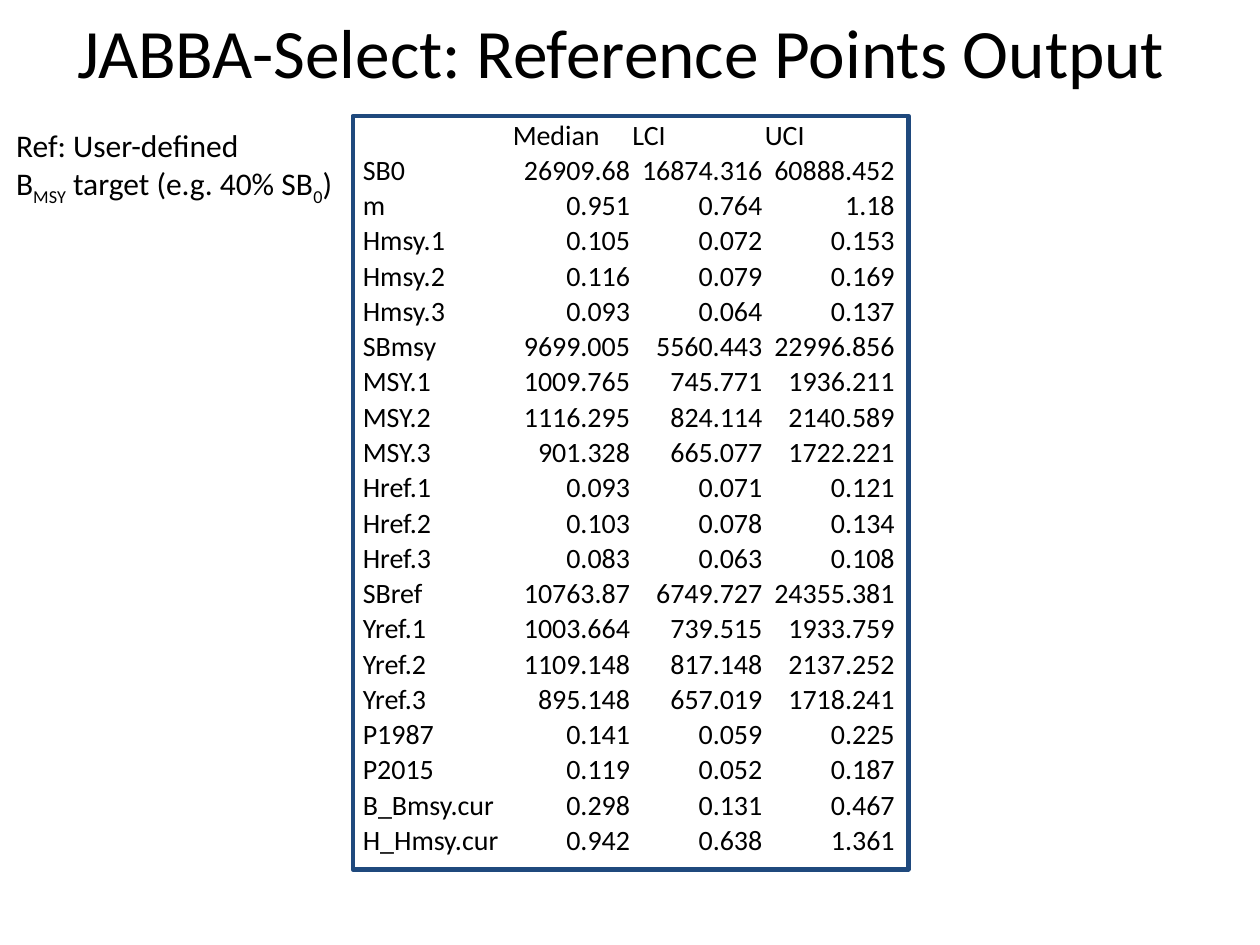
import pptx
import pptx.dml.color
import pptx.enum.shapes
import pptx.enum.text
import pptx.util

Inches = pptx.util.Inches
Align = pptx.enum.text.PP_ALIGN
Anchor = pptx.enum.text.MSO_ANCHOR

COLS = [1.19, 0.95, 1.05, 1.05]
ROW = 0.28
ROWS = [
    ("", "Median", "LCI", "UCI"),
    ("SB0", "26909.68", "16874.316", "60888.452"),
    ("m", "0.951", "0.764", "1.18"),
    ("Hmsy.1", "0.105", "0.072", "0.153"),
    ("Hmsy.2", "0.116", "0.079", "0.169"),
    ("Hmsy.3", "0.093", "0.064", "0.137"),
    ("SBmsy", "9699.005", "5560.443", "22996.856"),
    ("MSY.1", "1009.765", "745.771", "1936.211"),
    ("MSY.2", "1116.295", "824.114", "2140.589"),
    ("MSY.3", "901.328", "665.077", "1722.221"),
    ("Href.1", "0.093", "0.071", "0.121"),
    ("Href.2", "0.103", "0.078", "0.134"),
    ("Href.3", "0.083", "0.063", "0.108"),
    ("SBref", "10763.87", "6749.727", "24355.381"),
    ("Yref.1", "1003.664", "739.515", "1933.759"),
    ("Yref.2", "1109.148", "817.148", "2137.252"),
    ("Yref.3", "895.148", "657.019", "1718.241"),
    ("P1987", "0.141", "0.059", "0.225"),
    ("P2015", "0.119", "0.052", "0.187"),
    ("B_Bmsy.cur", "0.298", "0.131", "0.467"),
    ("H_Hmsy.cur", "0.942", "0.638", "1.361"),
]


def color(code):
    return pptx.dml.color.RGBColor.from_string(code)


class Deck:
    font = "Calibri"
    ink = "000000"
    edge = "1F497D"

    def __init__(self, wide, high):
        self.show = pptx.Presentation()
        self.show.slide_width = Inches(wide)
        self.show.slide_height = Inches(high)
        self.slide = self.show.slides.add_slide(self.show.slide_layouts[6])

    def style(self, font, size):
        font.name = self.font
        font.size = pptx.util.Pt(size)
        font.color.rgb = color(self.ink)

    def text(self, spot, lines, size, align=Align.LEFT, anchor=Anchor.TOP, wrap=True):
        """Each line is a list of (text, is subscript) pairs."""
        frame = self.slide.shapes.add_textbox(*map(Inches, spot)).text_frame
        frame.word_wrap = wrap
        frame.vertical_anchor = anchor
        for i, line in enumerate(lines):
            para = frame.paragraphs[0] if i == 0 else frame.add_paragraph()
            para.alignment = align
            for words, sub in line:
                run = para.add_run()
                run.text = words
                self.style(run.font, size)
                if sub:
                    run.font._element.set("baseline", "-25000")

    def cell(self, cell, words, size, align):
        cell.fill.background()
        cell.vertical_anchor = Anchor.BOTTOM
        cell.margin_left = cell.margin_right = cell.margin_top = Inches(0.01)
        cell.margin_bottom = 0
        cell.text_frame.text = words
        para = cell.text_frame.paragraphs[0]
        para.alignment = align
        self.style(para.font, size)
        for run in para.runs:
            self.style(run.font, size)

    def table(self, left, top, cols, row, data, size):
        table = self.slide.shapes.add_table(
            len(data), len(cols), Inches(left), Inches(top),
            Inches(sum(cols)), Inches(row * len(data))).table
        table.first_row = table.horz_banding = False
        for col, wide in zip(table.columns, cols):
            col.width = Inches(wide)
        for r, line in enumerate(data):
            table.rows[r].height = Inches(row)
            for c, words in enumerate(line):
                align = Align.RIGHT if r and c else Align.LEFT
                self.cell(table.cell(r, c), words, size, align)

    def frame(self, spot, width):
        box = self.slide.shapes.add_shape(
            pptx.enum.shapes.MSO_SHAPE.RECTANGLE, *map(Inches, spot))
        box.shadow.inherit = False
        box.fill.background()
        box.line.color.rgb = color(self.edge)
        box.line.width = pptx.util.Pt(width)


def main():
    deck = Deck(10, 7.5)

    # Title
    deck.text((0.43, 0.02, 9, 0.77),
              [[("JABBA-Select: Reference Points Output", False)]],
              39.6, Align.CENTER, Anchor.MIDDLE)

    # Reference points with their border
    deck.table(2.87, 0.93, COLS, ROW, ROWS, 16)
    deck.frame((2.8, 0.92, 4.41, 5.98), 2.5)

    # Side note
    deck.text((0.03, 0.95, 2.83, 0.71), [
        [("Ref: User-defined", False)],
        [("B", False), ("MSY", True), (" target (e.g. 40% SB", False),
         ("0", True), (")", False)],
    ], 18, wrap=False)

    deck.show.save("out.pptx")


if __name__ == "__main__":
    main()
